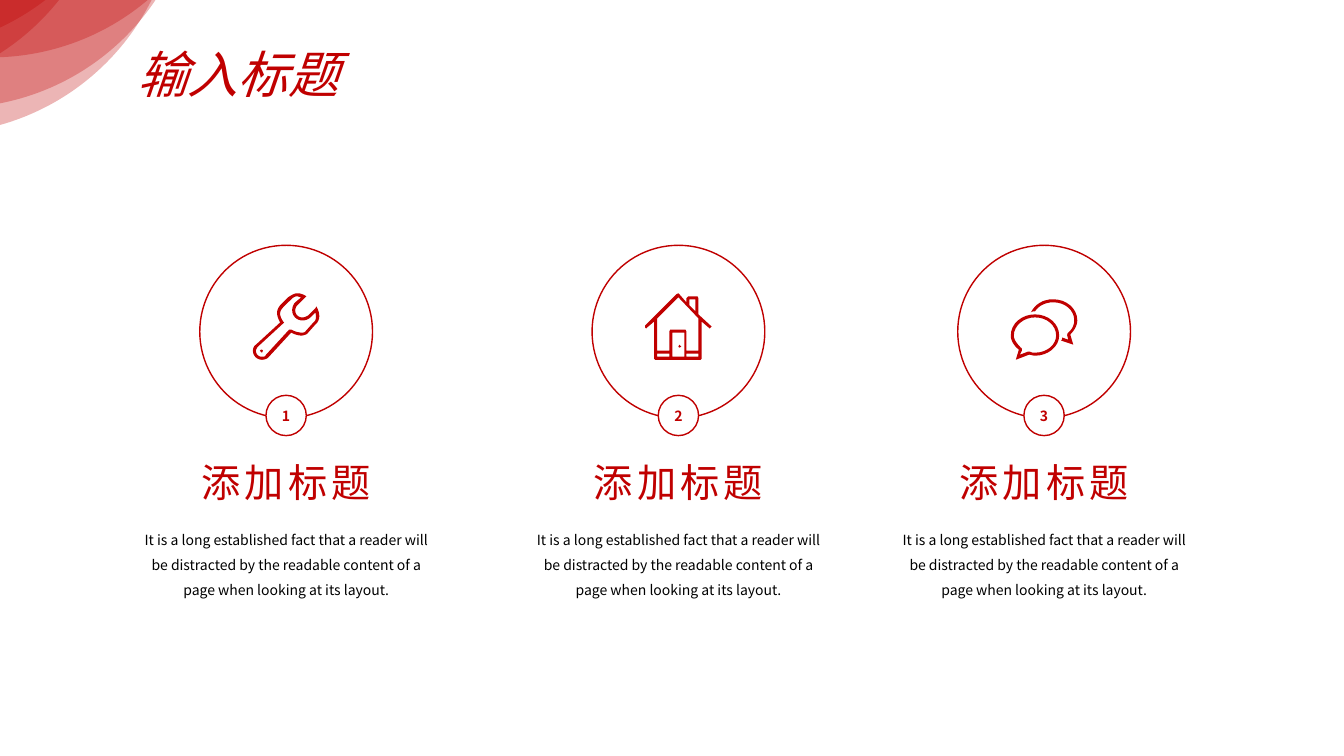
import pptx
import pptx.util
import pptx.dml.color
import pptx.enum.shapes
import pptx.enum.text
from pptx.oxml.ns import qn

Pt = pptx.util.Pt
RED = pptx.dml.color.RGBColor(0xC0, 0x00, 0x00)
WHITE = pptx.dml.color.RGBColor(0xFF, 0xFF, 0xFF)
BLACK = pptx.dml.color.RGBColor(0x00, 0x00, 0x00)

ICON_UNIT = 0.72
CURVE_STEPS = 8

# Icon contours: pairs are straight corners, sixes are cubic curves.
WRENCH = [
    [(8, 56), (7, 57), (9, 59), (10, 57), (9, 56)],
    [(63, 13), (62, 15), (55, 22), (53, 23, 51, 24, 49, 24),
     (45, 24, 42, 21, 42, 17), (42, 15, 43, 13, 44, 12), (42, 9),
     (40, 11, 39, 14, 39, 17), (39, 23, 44, 27, 49, 27),
     (52, 27, 55, 26, 57, 24), (62, 19), (63, 23, 63, 27, 60, 29),
     (52, 38), (51, 39, 50, 39, 48, 39), (48, 39, 43, 39, 38, 36),
     (36, 36), (13, 61), (12, 63, 11, 63, 9, 63), (6, 63, 3, 61, 3, 57),
     (3, 56, 4, 54, 5, 53), (30, 30), (31, 29), (30, 28),
     (26, 22, 26, 18, 30, 14), (38, 6), (40, 4, 42, 3, 44, 3),
     (45, 3, 46, 4, 48, 4), (42, 9), (44, 12), (53, 3),
     (50, 1, 47, 0, 44, 0), (41, 0, 38, 2, 35, 4), (27, 12),
     (22, 18, 24, 23, 27, 29), (3, 51), (1, 52, 0, 55, 0, 57),
     (0, 62, 4, 66, 9, 66), (11, 66, 14, 65, 15, 64), (38, 39),
     (43, 42, 48, 42, 48, 42), (50, 42, 53, 41, 54, 40), (62, 31),
     (67, 27, 67, 20, 63, 13)],
]
HOUSE = [
    [(66, 33), (53, 21), (53, 5), (52, 3), (43, 3), (41, 5), (41, 9),
     (34, 1), (33, 0), (31, 1), (0, 32), (0, 34), (1, 35), (2, 34), (9, 28),
     (9, 65), (10, 66), (55, 66), (56, 65), (56, 28), (63, 34), (64, 35)],
    [(53, 57), (41, 57), (41, 38), (40, 36), (25, 36), (24, 38), (24, 57),
     (12, 57), (12, 25), (33, 4), (53, 25)],
    [(53, 63), (41, 63), (41, 60), (53, 60)],
    [(39, 63), (27, 63), (27, 39), (39, 39)],
    [(24, 63), (12, 63), (12, 60), (24, 60)],
    [(44, 6), (50, 6), (50, 18), (44, 12)],
    [(34, 54), (36, 53), (34, 51), (33, 53)],
]
BUBBLES = [
    [(24, 53), (22, 53, 21, 53, 19, 52), (17, 52), (9, 55), (11, 51),
     (11, 50, 11, 48, 10, 48), (6, 44, 3, 40, 3, 36), (3, 26, 13, 18, 24, 18),
     (36, 18, 45, 26, 45, 36), (45, 45, 36, 53, 24, 53)],
    [(24, 15), (11, 15, 0, 24, 0, 36), (0, 41, 3, 46, 8, 50), (5, 60),
     (18, 55), (20, 55, 22, 56, 24, 56), (37, 56, 48, 47, 48, 36),
     (48, 24, 37, 15, 24, 15)],
    [(66, 21), (66, 9, 55, 0, 42, 0), (32, 0, 24, 5, 20, 13),
     (21, 12, 23, 12, 24, 12), (27, 7, 34, 3, 42, 3), (54, 3, 63, 11, 63, 21),
     (63, 25, 61, 30, 57, 33), (56, 34, 56, 35, 56, 36), (57, 40), (51, 38),
     (51, 39, 51, 40, 50, 41), (62, 45), (59, 35), (63, 31, 66, 26, 66, 21)],
]


def flatten(contour):
    """Turn corners and cubic curves into a list of points."""
    points = []
    for node in contour:
        if len(node) == 2:
            points.append(node)
            continue
        x0, y0 = points[-1]
        x1, y1, x2, y2, x3, y3 = node
        for i in range(1, CURVE_STEPS + 1):
            t = i / CURVE_STEPS
            a, b, c, d = (1 - t) ** 3, 3 * t * (1 - t) ** 2, 3 * t * t * (1 - t), t ** 3
            points.append((a * x0 + b * x1 + c * x2 + d * x3,
                           a * y0 + b * y1 + c * y2 + d * y3))
    return points


class Deck:
    font = "Noto Sans CJK SC"

    def __init__(self, width, height):
        self.prs = pptx.Presentation()
        self.prs.slide_width, self.prs.slide_height = Pt(width), Pt(height)
        self.s = self.prs.slides.add_slide(self.prs.slide_layouts[5])

    def set_text(self, tf, text, size, color, bold=False, italic=False,
                 spacing=None, line_spacing=None):
        tf.word_wrap = True
        p = tf.paragraphs[0]
        p.text = text
        p.alignment = pptx.enum.text.PP_ALIGN.CENTER
        p.line_spacing = line_spacing
        f = p.font
        f.name, f.size, f.bold, f.italic = self.font, Pt(size), bold, italic
        f.color.rgb = color
        rpr = p._p.pPr.find(qn("a:defRPr"))
        ea = rpr.makeelement(qn("a:ea"), {"typeface": self.font})
        rpr.find(qn("a:latin")).addnext(ea)
        if spacing:
            rpr.set("spc", str(spacing * 100))

    def title(self, text, x, y, w, h):
        sp = self.s.shapes.title
        sp.left, sp.top, sp.width, sp.height = Pt(x), Pt(y), Pt(w), Pt(h)
        tf = sp.text_frame
        tf.auto_size = pptx.enum.text.MSO_AUTO_SIZE.NONE
        tf.vertical_anchor = pptx.enum.text.MSO_ANCHOR.TOP
        self.set_text(tf, text, 36, RED, italic=True)

    def text(self, text, x, y, w, h, size, color, **style):
        tf = self.s.shapes.add_textbox(Pt(x), Pt(y), Pt(w), Pt(h)).text_frame
        tf.margin_left = tf.margin_right = 0
        self.set_text(tf, text, size, color, **style)

    def circle(self, cx, cy, d, fill, alpha=None, label=None):
        """Centre a circle on (cx, cy); alpha in percent drops the outline."""
        sp = self.s.shapes.add_shape(pptx.enum.shapes.MSO_SHAPE.OVAL,
                                     Pt(cx - d / 2), Pt(cy - d / 2), Pt(d), Pt(d))
        sp.shadow.inherit = False
        sp.fill.solid()
        sp.fill.fore_color.rgb = fill
        if alpha is None:
            sp.line.color.rgb, sp.line.width = RED, Pt(1)
        else:
            sp.line.fill.background()
            clr = sp._element.spPr.find(qn("a:solidFill"))[0]
            clr.append(clr.makeelement(qn("a:alpha"), {"val": str(alpha * 1000)}))
        if label:
            tf = sp.text_frame
            tf.margin_left = tf.margin_right = tf.margin_top = tf.margin_bottom = 0
            tf.vertical_anchor = pptx.enum.text.MSO_ANCHOR.MIDDLE
            self.set_text(tf, label, 10, RED, bold=True)

    def icon(self, contours, x, y):
        outlines = [[(Pt(x + px * ICON_UNIT), Pt(y + py * ICON_UNIT))
                     for px, py in flatten(c)] for c in contours]
        builder = self.s.shapes.build_freeform(*outlines[0][0])
        for i, outline in enumerate(outlines):
            if i:
                builder.move_to(*outline[0])
            builder.add_line_segments(outline[1:], close=True)
        sp = builder.convert_to_shape()
        sp.shadow.inherit = False
        sp.fill.solid()
        sp.fill.fore_color.rgb = RED
        sp.line.fill.background()


def main():
    deck = Deck(960, 540)
    body = ("It is a long established fact that a reader will be distracted by "
            "the readable content of a page when looking at its layout.")
    columns = [(204.4, WRENCH, 209.5), (484.6, HOUSE, 209.5), (745.8, BUBBLES, 213.8)]
    for number, (cx, icon, icon_top) in enumerate(columns, 1):
        left = cx - 103.7
        deck.text("添加标题", left, 324, 207.4, 41, 28, RED, spacing=3)
        deck.text(body, left, 370, 207.4, 62, 10, BLACK, line_spacing=1.5)
        deck.circle(cx, 236.9, 123.4, WHITE)
        deck.icon(icon, cx - 33 * ICON_UNIT, icon_top)
        deck.circle(cx, 296.8, 28.8, WHITE, label=str(number))

    corner_centers = [(-73.4, -137.5), (-6.5, -132.5), (-93.6, -108),
                      (-33.1, -96.5), (-46.8, -77.8)]
    for cx, cy in corner_centers:
        deck.circle(cx, cy, 347, RED, alpha=29)
    deck.title("输入标题", 70, 27.4, 200, 51)
    deck.prs.save("out.pptx")


if __name__ == "__main__":
    main()
